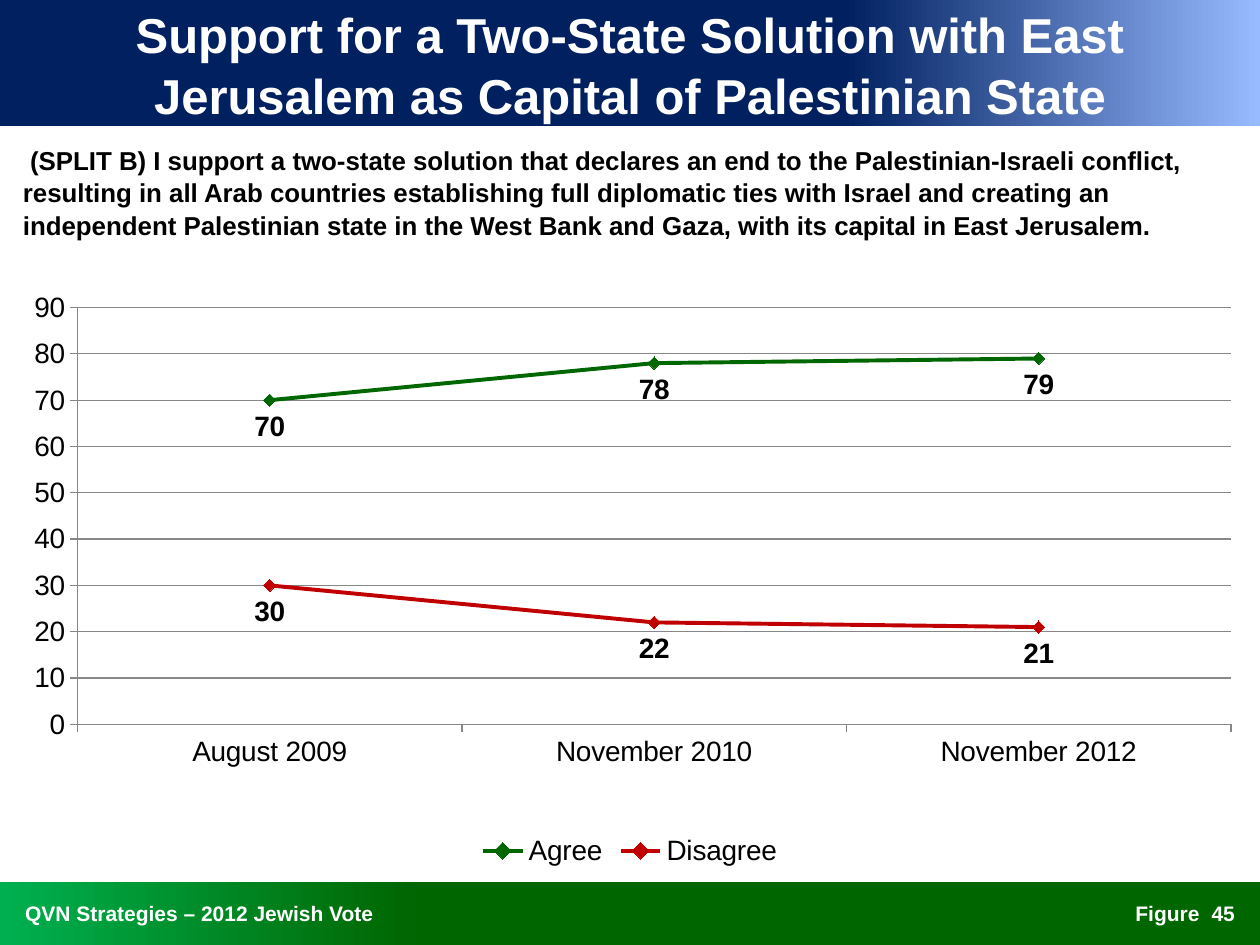
from lxml.etree import SubElement
from pptx import Presentation
from pptx.chart.data import CategoryChartData
from pptx.dml.color import RGBColor
from pptx.enum.chart import (XL_CHART_TYPE as ChartType, XL_LABEL_POSITION as LabelPosition,
                             XL_LEGEND_POSITION as LegendPosition, XL_MARKER_STYLE as Marker,
                             XL_TICK_MARK as Tick)
from pptx.enum.shapes import MSO_SHAPE as Shape
from pptx.enum.text import MSO_ANCHOR as Anchor, PP_ALIGN as Align
from pptx.oxml.ns import qn
from pptx.util import Pt

COLORS = {"white": "FFFFFF", "black": "000000", "navy": "002060", "sky": "98BAFF",
          "green": "006600", "mint": "00B050", "red": "C00000", "grid": "878787"}
FONT = "Arial"
WIDTH, HEIGHT = 720, 540
PLOT_AREA = {"x": 0.054, "y": 0.041, "w": 0.931, "h": 0.709}
MONTHS = ["August 2009", "November 2010", "November 2012"]
SERIES = [("Agree", [70, 78, 79], "green"), ("Disagree", [30, 22, 21], "red")]


def color(name):
    return RGBColor.from_string(COLORS[name])


def apply(target, **values):
    for name, value in values.items():
        setattr(target, name, value)


def set_font(font, size, tint="black", bold=False):
    apply(font, name=FONT, size=Pt(size), bold=bold)
    font.color.rgb = color(tint)


def add_band(page, box, start, end, angle):
    band = page.shapes.add_shape(Shape.RECTANGLE, *map(Pt, box))
    band.shadow.inherit = False
    band.line.fill.background()
    band.fill.gradient()
    band.fill.gradient_angle = angle
    for stop, tint, position in zip(band.fill.gradient_stops, (start, end), (0, 0.33)):
        stop.color.rgb = color(tint)
        stop.position = position


def add_text(page, box, text, size, tint="white", align=Align.LEFT,
             anchor=Anchor.MIDDLE, side=7.2, spacing=1.0):
    frame = page.shapes.add_textbox(*map(Pt, box)).text_frame
    apply(frame, word_wrap=True, vertical_anchor=anchor,
          margin_left=Pt(side), margin_right=Pt(side))
    para = frame.paragraphs[0]
    apply(para, alignment=align, line_spacing=spacing)
    span = para.add_run()
    span.text = text
    set_font(span.font, size, tint, True)


def add_header(page, box):
    add_band(page, box, "sky", "navy", 180)
    add_text(page, box, "Support for a Two-State Solution with East Jerusalem "
             "as Capital of Palestinian State", 28, align=Align.CENTER, side=14.4, spacing=1.05)


def add_footer(page, box):
    left, top, width, height = box
    add_band(page, box, "mint", "green", 0)
    add_text(page, (left, top, 498, height), "QVN Strategies – 2012 Jewish Vote", 12, side=14.4)
    add_text(page, (left + width - 111.6, top, 84.2, height), "Figure", 12, align=Align.RIGHT)
    add_text(page, (left + width - 42, top, 42, height), "45", 12, align=Align.CENTER)


def add_question(page, box):
    add_text(page, box, " (SPLIT B) I support a two-state solution that declares an end to the "
             "Palestinian-Israeli conflict, resulting in all Arab countries establishing full "
             "diplomatic ties with Israel and creating an independent Palestinian state in the "
             "West Bank and Gaza, with its capital in East Jerusalem.",
             14.8, "black", anchor=Anchor.TOP, spacing=1.05)


def set_plot_area(chart):
    plot_area = chart.plots[0]._element.getparent()
    layout = plot_area.find(qn("c:layout"))
    if layout is None:
        layout = SubElement(plot_area, qn("c:layout"))
        plot_area.insert(0, layout)
    manual = SubElement(layout, qn("c:manualLayout"))
    settings = {"layoutTarget": "inner", "xMode": "edge", "yMode": "edge", **PLOT_AREA}
    for name, value in settings.items():
        SubElement(manual, qn(f"c:{name}")).set("val", str(value))


def style_series(series, tint):
    series.smooth = False
    series.format.line.width = Pt(2.25)
    apply(series.marker, style=Marker.DIAMOND, size=7)
    series.marker.format.fill.solid()
    series.marker.format.fill.fore_color.rgb = color(tint)
    for line in (series.format.line, series.marker.format.line):
        line.color.rgb = color(tint)
    labels = series.data_labels
    apply(labels, show_value=True, position=LabelPosition.BELOW)
    set_font(labels.font, 16, bold=True)


def add_trend_chart(page, box):
    data = CategoryChartData()
    data.categories = MONTHS
    for name, values, _ in SERIES:
        data.add_series(name, values)
    chart = page.shapes.add_chart(ChartType.LINE_MARKERS, *map(Pt, box), data).chart
    apply(chart, has_title=False, has_legend=True)
    apply(chart.legend, position=LegendPosition.BOTTOM, include_in_layout=False)
    chart.plots[0].vary_by_categories = False
    set_font(chart.font, 16)
    set_plot_area(chart)
    for series, (_, _, tint) in zip(chart.plots[0].series, SERIES):
        style_series(series, tint)
    scale = chart.value_axis
    apply(scale, minimum_scale=0, maximum_scale=90, major_unit=10, has_major_gridlines=True)
    for axis in (chart.category_axis, scale):
        apply(axis, major_tick_mark=Tick.OUTSIDE, minor_tick_mark=Tick.NONE)
    for part in (chart.category_axis, scale, scale.major_gridlines):
        part.format.line.color.rgb = color("grid")
        part.format.line.width = Pt(0.75)


def main():
    deck = Presentation()
    apply(deck, slide_width=Pt(WIDTH), slide_height=Pt(HEIGHT))
    page = deck.slides.add_slide(deck.slide_layouts[6])
    add_header(page, (0, 0, WIDTH, 72))
    add_footer(page, (0, HEIGHT - 36, WIDTH, 36))
    add_trend_chart(page, (6, 162, WIDTH - 12, 336))
    add_question(page, (6, 78, WIDTH - 12, 66))
    deck.save("out.pptx")


if __name__ == "__main__":
    main()
